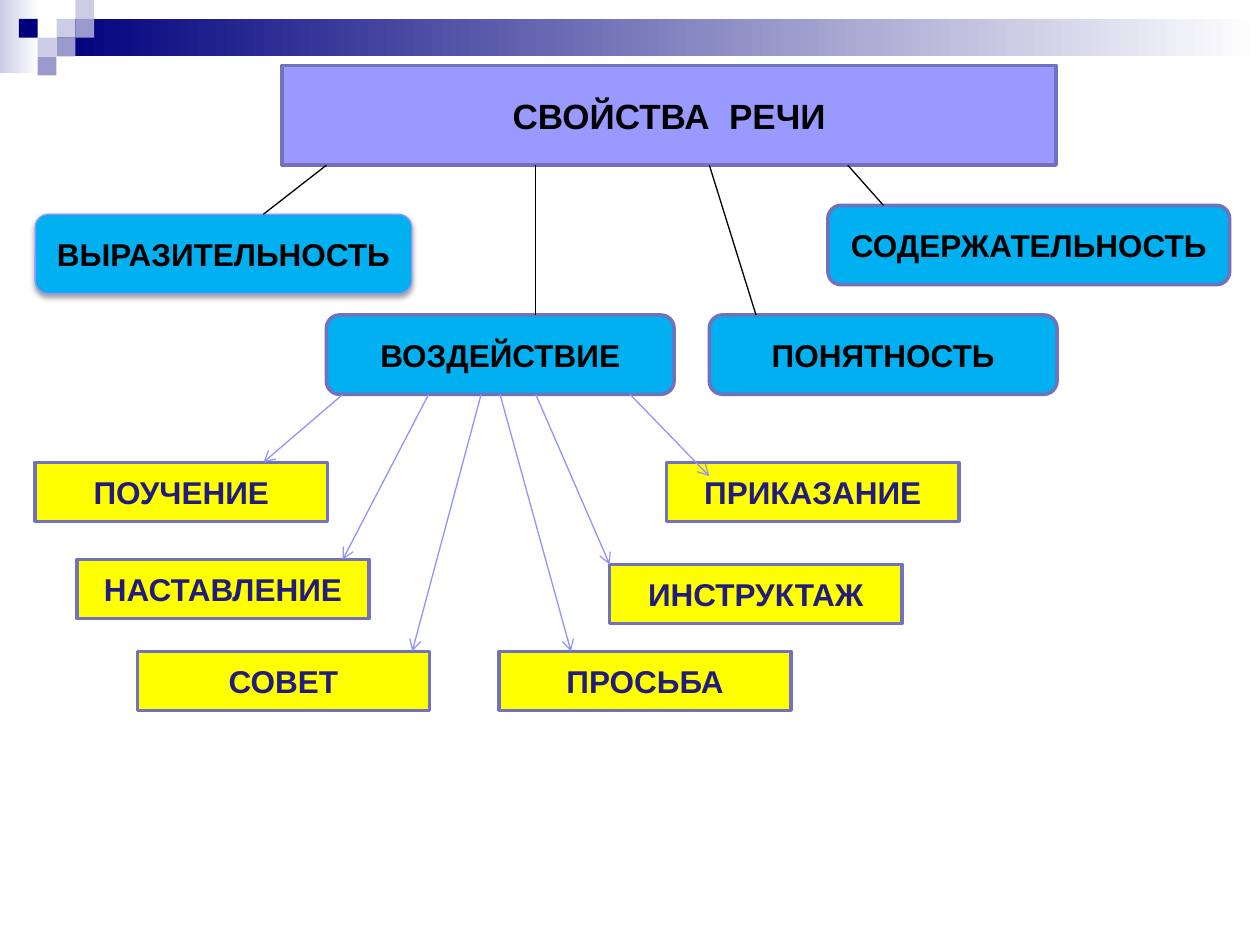
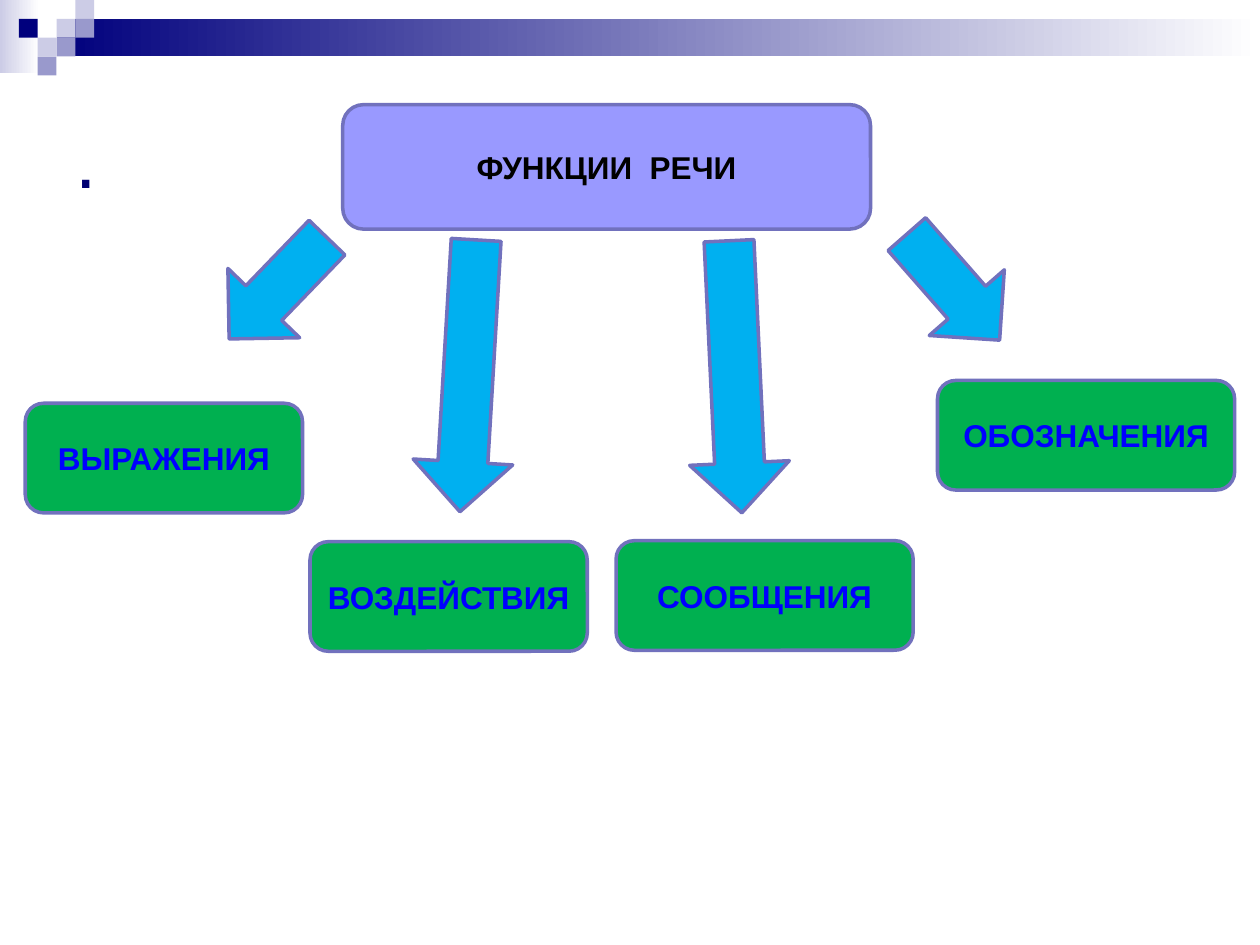
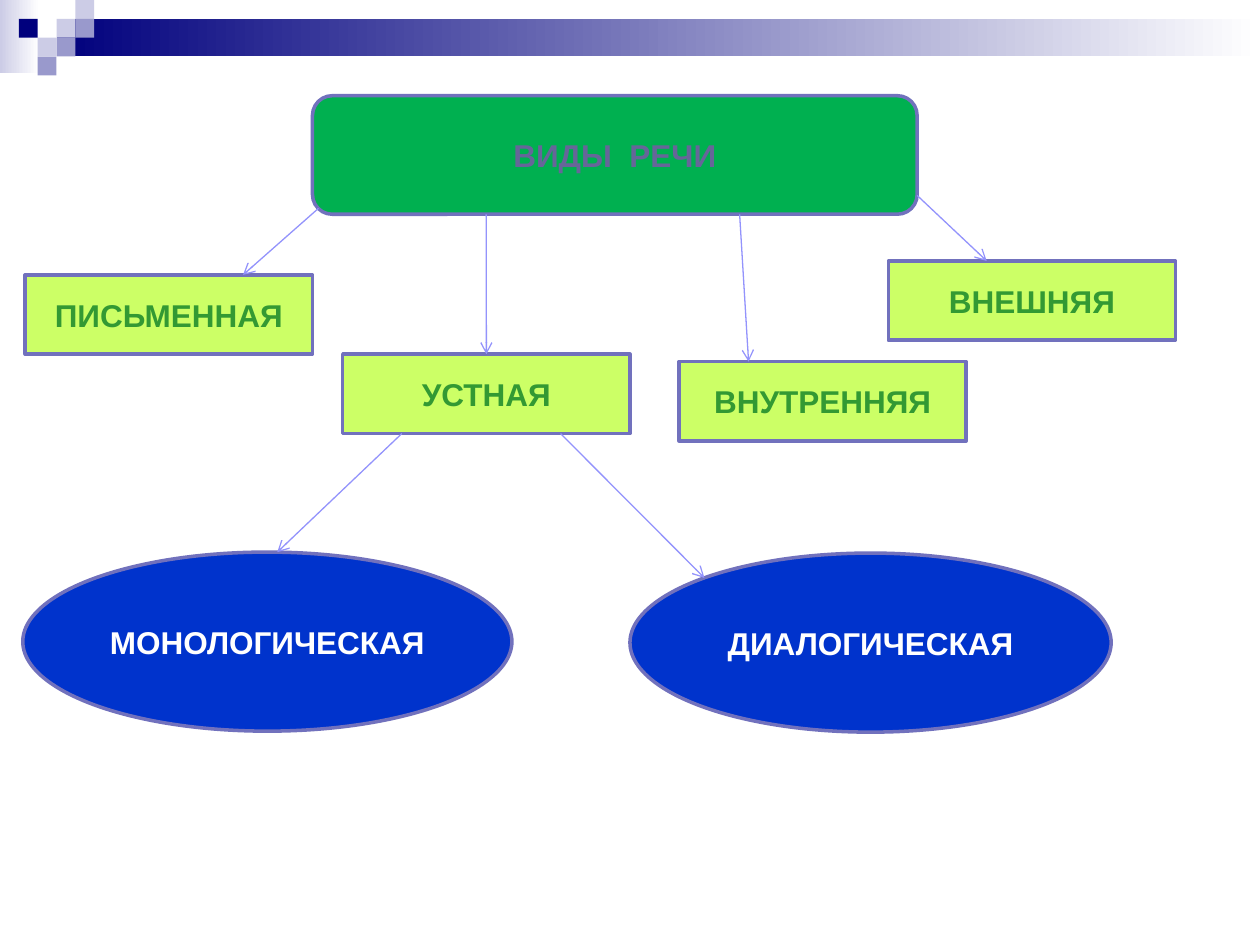
from lxml.etree import SubElement
from pptx import Presentation
from pptx.dml.color import RGBColor
from pptx.enum.shapes import MSO_CONNECTOR, MSO_SHAPE as SHAPE
from pptx.enum.text import MSO_ANCHOR, PP_ALIGN
from pptx.oxml.ns import qn
from pptx.util import Cm, Pt

FONT = "Arial"
BLACK = RGBColor(0x00, 0x00, 0x00)
WHITE = RGBColor(0xFF, 0xFF, 0xFF)
NAVY = RGBColor(0x00, 0x00, 0x7D)
TITLE_NAVY = RGBColor(0x00, 0x00, 0x72)
INDIGO = RGBColor(0x21, 0x1C, 0x7E)
BLUE = RGBColor(0x00, 0x00, 0xFF)
ROYAL = RGBColor(0x00, 0x33, 0xCC)
SKY = RGBColor(0x00, 0xB0, 0xF0)
LILAC = RGBColor(0x99, 0x99, 0xFF)
ARROW_LILAC = RGBColor(0x93, 0x93, 0xFC)
OUTLINE = RGBColor(0x71, 0x71, 0xBD)
PALE = RGBColor(0xCC, 0xCC, 0xE6)
MUTED = RGBColor(0x99, 0x99, 0xCC)
PLUM = RGBColor(0x66, 0x66, 0x99)
GREEN = RGBColor(0x00, 0xB0, 0x50)
LEAF = RGBColor(0x33, 0x99, 0x33)
LIME = RGBColor(0xCC, 0xFF, 0x66)
YELLOW = RGBColor(0xFF, 0xFF, 0x00)

# All lengths below are centimetres.
# Header: gradient bars (left, top, width, height, start colour),
# then pixels (column, row, colour) on a square grid
BARS = [(0, 0, 0.79, 1.47, PALE), (1.14, 0.38, 24.26, 0.76, NAVY)]
PIXEL = 0.38
PIXELS = [(3, 1, PALE), (4, 0, PALE), (4, 1, MUTED), (2, 2, PALE),
          (1, 1, NAVY), (3, 2, MUTED), (2, 3, MUTED)]

# Node styles: outline shape, fill, text colour
PROPERTY = (SHAPE.ROUNDED_RECTANGLE, SKY, BLACK)
INFLUENCE = (SHAPE.RECTANGLE, YELLOW, INDIGO)
FUNCTION = (SHAPE.ROUNDED_RECTANGLE, GREEN, BLUE)
KIND = (SHAPE.RECTANGLE, LIME, LEAF)
ORAL_KIND = (SHAPE.OVAL, ROYAL, WHITE)

# Nodes: text, left, top, width
PROPERTIES_ROOT = ("СВОЙСТВА  РЕЧИ", 5.69, 1.32, 15.6)
EXPRESSIVENESS = ("ВЫРАЗИТЕЛЬНОСТЬ", 0.71, 4.32, 7.59)
PROPERTIES = [
    ("ВОЗДЕЙСТВИЕ", 6.58, 6.35, 7.01),
    ("ПОНЯТНОСТЬ", 14.3, 6.35, 7.01),
    ("СОДЕРЖАТЕЛЬНОСТЬ", 16.69, 4.14, 8.1),
]
INFLUENCES = [
    ("ПОУЧЕНИЕ", 0.71, 9.32, 5.89),
    ("НАСТАВЛЕНИЕ", 1.55, 11.28, 5.89),
    ("СОВЕТ", 2.77, 13.13, 5.89),
    ("ПРОСЬБА", 10.06, 13.13, 5.89),
    ("ИНСТРУКТАЖ", 12.29, 11.38, 5.89),
    ("ПРИКАЗАНИЕ", 13.44, 9.32, 5.89),
]
# Links leaving one level: start x, end x, end y
INFLUENCE_TOP = 7.95
INFLUENCE_LINKS = [(6.91, 5.31, 9.32), (8.64, 6.91, 11.28), (9.7, 8.31, 13.13),
                   (10.08, 11.51, 13.13), (10.8, 12.29, 11.38), (12.7, 14.3, 9.6)]
PROPERTY_TOP = 3.33
PROPERTY_LINKS = [(6.58, 5.31, 4.32), (10.8, 10.8, 6.35),
                  (14.3, 15.24, 6.35), (17.09, 17.81, 4.14)]

FUNCTIONS_ROOT = ("ФУНКЦИИ  РЕЧИ", 6.91, 2.11, 10.64)
FUNCTIONS = [
    ("ВЫРАЖЕНИЯ", 0.51, 8.13, 5.59),
    ("ОБОЗНАЧЕНИЯ", 18.9, 7.67, 5.99),
    ("СООБЩЕНИЯ", 12.42, 10.9, 5.99),
    ("ВОЗДЕЙСТВИЯ", 6.25, 10.92, 5.59),
]
# Block arrows: left, top, height, rotation
FUNCTION_ARROWS = [(4.6, 4.39, 2.84, 224), (8.43, 4.83, 5.49, 183.4),
                   (13.82, 4.85, 5.49, 177.3), (18.21, 4.37, 2.84, 138.8)]

KINDS_ROOT = ("ВИДЫ  РЕЧИ", 6.3, 1.93, 12.19)
ORAL = ("УСТНАЯ", 6.91, 7.14, 5.79)
KINDS = [
    ("ПИСЬМЕННАЯ", 0.51, 5.54, 5.79),
    ("ВНУТРЕННЯЯ", 13.69, 7.29, 5.79),
    ("ВНЕШНЯЯ", 17.91, 5.26, 5.79),
]
ORAL_KINDS = [("МОНОЛОГИЧЕСКАЯ", 0.46, 11.13, 9.86),
              ("ДИАЛОГИЧЕСКАЯ", 12.7, 11.15, 9.7)]
# Arrows: start x, start y, end x, end y
ORAL_ARROW = (9.8, 4.32, 9.8, 7.14)
KIND_ARROWS = [(6.42, 4.2, 4.9, 5.54), (14.91, 4.32, 15.09, 7.29),
               (18.49, 3.94, 19.89, 5.26), (8.1, 8.74, 5.59, 11.13),
               (11.3, 8.74, 14.2, 11.65)]


def add_plain(slide, outline, box, color):
    """Add a filled shape without line or shadow."""
    shape = slide.shapes.add_shape(outline, *map(Cm, box))
    shape.shadow.inherit = False
    shape.fill.solid()
    shape.fill.fore_color.rgb = color
    shape.line.fill.background()
    return shape


def add_outlined(slide, outline, box, color):
    shape = add_plain(slide, outline, box, color)
    shape.line.color.rgb = OUTLINE
    shape.line.width = Pt(2)
    return shape


def add_node(slide, node, height, style, size=18):
    text, left, top, width = node
    outline, fill, text_color = style
    shape = add_outlined(slide, outline, (left, top, width, height), fill)
    frame = shape.text_frame
    frame.word_wrap = False
    frame.vertical_anchor = MSO_ANCHOR.MIDDLE
    label = frame.paragraphs[0]
    label.text = text
    label.alignment = PP_ALIGN.CENTER
    set_font(label.font, size, text_color, bold=True)
    return shape


def set_font(font, size, color, bold=False):
    font.name = FONT
    font.size = Pt(size)
    font.bold = bold
    font.color.rgb = color


def add_nodes(slide, nodes, height, style):
    for node in nodes:
        add_node(slide, node, height, style)


def add_link(slide, ends, color=ARROW_LILAC, arrow=True):
    link = slide.shapes.add_connector(MSO_CONNECTOR.STRAIGHT, *map(Cm, ends))
    link.line.color.rgb = color
    link.line.width = Pt(0.75)
    if arrow:
        SubElement(link.line._get_or_add_ln(), qn("a:tailEnd"), type="arrow")
    SubElement(link._element.spPr, qn("a:effectLst"))
    return link


def soften(shape):
    """Give a shape a thin light line and a soft shadow below it."""
    shape.line.color.rgb = ARROW_LILAC
    shape.line.width = Pt(0.75)
    effects = shape._element.spPr.find(qn("a:effectLst"))
    shadow = SubElement(effects, qn("a:outerShdw"), blurRad="40000",
                        dist="20000", dir="5400000", rotWithShape="0")
    tint = SubElement(shadow, qn("a:srgbClr"), val="000000")
    SubElement(tint, qn("a:alpha"), val="38000")


def new_slide(prs):
    """Add a blank slide with the shared header."""
    slide = prs.slides.add_slide(prs.slide_layouts[6])
    for *box, start in BARS:
        fill = add_plain(slide, SHAPE.RECTANGLE, box, start).fill
        fill.gradient()
        fill.gradient_angle = 0
        for stop, color, position in zip(fill.gradient_stops, (start, WHITE), (0, 1)):
            stop.color.rgb = color
            stop.position = position
    for column, row, color in PIXELS:
        add_plain(slide, SHAPE.RECTANGLE,
                  (column * PIXEL, row * PIXEL, PIXEL, PIXEL), color)
    return slide


def build_properties(prs):
    slide = new_slide(prs)
    add_node(slide, PROPERTIES_ROOT, 2.01, (SHAPE.RECTANGLE, LILAC, BLACK), size=20)
    soften(add_node(slide, EXPRESSIVENESS, 1.6, PROPERTY))
    add_nodes(slide, PROPERTIES, 1.6, PROPERTY)
    add_nodes(slide, INFLUENCES, 1.19, INFLUENCE)
    for start, *end in INFLUENCE_LINKS:
        add_link(slide, (start, INFLUENCE_TOP, *end))
    for start, *end in PROPERTY_LINKS:
        add_link(slide, (start, PROPERTY_TOP, *end), BLACK, arrow=False)


def build_functions(prs):
    slide = new_slide(prs)
    title = slide.shapes.add_textbox(Cm(1.27), Cm(1.27), Cm(22.86), Cm(3.81))
    title.text_frame.word_wrap = True
    title.text_frame.vertical_anchor = MSO_ANCHOR.MIDDLE
    dot = title.text_frame.paragraphs[0]
    dot.text = "."
    set_font(dot.font, 44, TITLE_NAVY)
    add_node(slide, FUNCTIONS_ROOT, 2.51, (SHAPE.ROUNDED_RECTANGLE, LILAC, BLACK))
    add_nodes(slide, FUNCTIONS, 2.21, FUNCTION)
    for left, top, height, rotation in FUNCTION_ARROWS:
        arrow = add_outlined(slide, SHAPE.UP_ARROW, (left, top, 2.01, height), SKY)
        arrow.rotation = rotation


def build_kinds(prs):
    slide = new_slide(prs)
    add_node(slide, KINDS_ROOT, 2.39, (SHAPE.ROUNDED_RECTANGLE, GREEN, PLUM))
    oral = add_node(slide, ORAL, 1.6, KIND)
    add_nodes(slide, KINDS, 1.6, KIND)
    add_nodes(slide, ORAL_KINDS, 3.61, ORAL_KIND)
    add_link(slide, ORAL_ARROW).end_connect(oral, 0)
    for ends in KIND_ARROWS:
        add_link(slide, ends)


def main():
    prs = Presentation()
    prs.slide_width, prs.slide_height = Cm(25.4), Cm(19.05)
    build_properties(prs)
    build_functions(prs)
    build_kinds(prs)
    prs.save("out.pptx")


if __name__ == "__main__":
    main()
